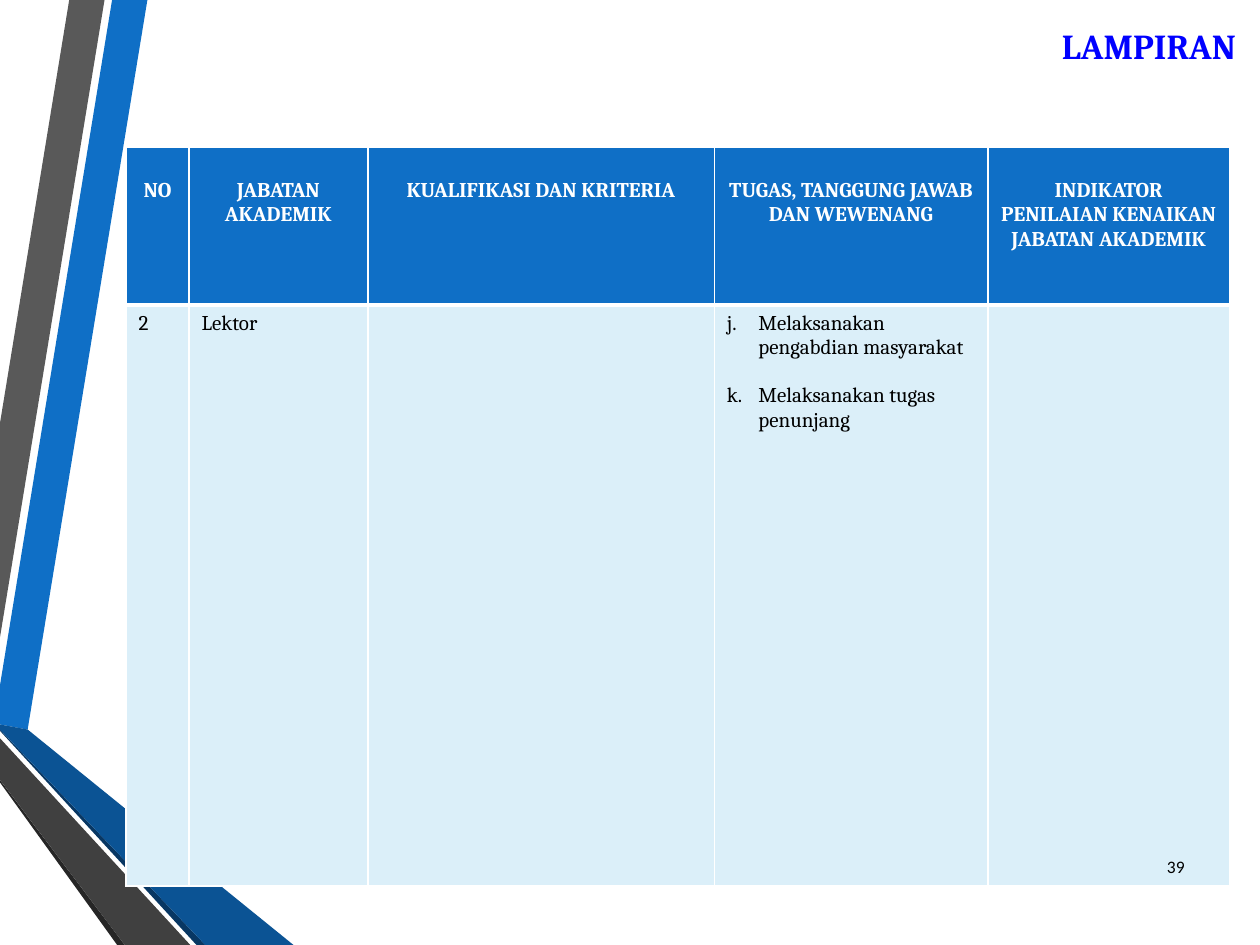
from lxml.etree import SubElement
from pptx import Presentation
from pptx.dml.color import RGBColor
from pptx.enum.text import MSO_ANCHOR, PP_ALIGN
from pptx.oxml import parse_xml
from pptx.oxml.ns import nsdecls, qn
from pptx.util import Inches, Pt

BLUE = RGBColor(0x0F, 0x6F, 0xC6)
MID_BLUE = RGBColor(0x0B, 0x53, 0x94)
DARK_BLUE = RGBColor(0x08, 0x37, 0x63)
GREY = RGBColor(0x59, 0x59, 0x59)
DARK_GREY = RGBColor(0x40, 0x40, 0x40)
CHARCOAL = RGBColor(0x26, 0x26, 0x26)
PALE_BLUE = RGBColor(0xDB, 0xEF, 0xF9)
TITLE_BLUE = RGBColor(0x00, 0x00, 0xFF)
WHITE = RGBColor(0xFF, 0xFF, 0xFF)
BLACK = RGBColor(0x00, 0x00, 0x00)

RIBBONS = [
    (BLUE, [(0, 5.44), (0, 5.75), (0.22, 5.79), (1.17, 0), (0.89, 0)]),
    (GREY, [(0.83, 0), (0.55, 0), (0, 3.36), (0, 5.06)]),
    (CHARCOAL, [(0, 6.19), (0, 6.21), (0.93, 7.5), (0.99, 7.5)]),
    (DARK_BLUE, [(0, 5.79), (0, 5.8), (1.56, 7.5), (1.63, 7.5)]),
    (MID_BLUE, [(0, 5.79), (1.63, 7.5), (2.33, 7.5), (0.22, 5.79), (0, 5.75)]),
    (DARK_GREY, [(0, 6.19), (0.99, 7.5), (1.51, 7.5), (0, 5.86)]),
]
COLUMNS = [
    ("NO", 0.5, ["2"]),
    ("JABATAN AKADEMIK", 1.42, ["Lektor"]),
    ("KUALIFIKASI DAN KRITERIA", 2.75, []),
    ("TUGAS, TANGGUNG JAWAB DAN WEWENANG", 2.17,
     ["Melaksanakan pengabdian masyarakat", "Melaksanakan tugas penunjang"]),
    ("INDIKATOR PENILAIAN KENAIKAN JABATAN AKADEMIK", 1.92, []),
]
ROW_HEIGHTS = (1.25, 4.61)
FIRST_LETTER = 10


def write(paragraph, text, size=12, font="Cambria", color=BLACK, bold=False,
          align=PP_ALIGN.LEFT):
    """Put formatted text into a paragraph."""
    paragraph.alignment = align
    run = paragraph.add_run()
    run.text = text
    run.font.size = Pt(size)
    run.font.name = font
    run.font.bold = bold
    run.font.color.rgb = color


def letter(paragraph, start):
    """Number a paragraph with lower-case letters and a hanging indent."""
    properties = paragraph._p.get_or_add_pPr()
    properties.set("marL", str(Inches(0.25)))
    properties.set("indent", str(Inches(-0.25)))
    SubElement(properties, qn("a:buAutoNum"), type="alphaLcPeriod", startAt=str(start))


def style_cell(cell, fill, bottom=1):
    """Fill a cell and give it white borders."""
    cell.fill.solid()
    cell.fill.fore_color.rgb = fill
    widths = {"lnL": 1, "lnR": 1, "lnT": 1, "lnB": bottom}
    for position, (side, width) in enumerate(widths.items()):
        border = parse_xml(
            f'<a:{side} {nsdecls("a")} w="{Pt(width)}"><a:solidFill>'
            f'<a:srgbClr val="{WHITE}"/></a:solidFill></a:{side}>')
        cell._tc.get_or_add_tcPr().insert(position, border)


def add_ribbons(slide, left, top):
    """Draw the folded ribbons from the given corner."""
    for color, points in RIBBONS:
        corners = [(Inches(left + x), Inches(top + y)) for x, y in points]
        builder = slide.shapes.build_freeform(*corners[0])
        builder.add_line_segments(corners[1:], close=True)
        ribbon = builder.convert_to_shape()
        ribbon.shadow.inherit = False
        ribbon.fill.solid()
        ribbon.fill.fore_color.rgb = color
        ribbon.line.fill.background()


def add_title(slide, left, top, width, height):
    """Place the slide title in its box."""
    title = slide.shapes.title
    title.left, title.top = Inches(left), Inches(top)
    title.width, title.height = Inches(width), Inches(height)
    write(title.text_frame.paragraphs[0], "LAMPIRAN", size=20, color=TITLE_BLUE,
          bold=True, align=PP_ALIGN.RIGHT)


def add_positions_table(slide, left, top, width, height):
    """Build the table of academic positions."""
    table = slide.shapes.add_table(
        len(ROW_HEIGHTS), len(COLUMNS), Inches(left), Inches(top),
        Inches(width), Inches(height)).table
    for row, row_height in zip(table.rows, ROW_HEIGHTS):
        row.height = Inches(row_height)
    for index, (heading, column_width, entries) in enumerate(COLUMNS):
        table.columns[index].width = Inches(column_width)
        header, body = table.cell(0, index), table.cell(1, index)
        style_cell(header, BLUE, bottom=3)
        style_cell(body, PALE_BLUE)
        header.margin_top = Inches(0.25)
        write(header.text_frame.paragraphs[0], heading, color=WHITE, bold=True,
              align=PP_ALIGN.CENTER)
        for number, entry in enumerate(entries):
            frame = body.text_frame
            paragraph = frame.add_paragraph() if number else frame.paragraphs[0]
            write(paragraph, entry)
            if number:
                paragraph.space_before = Pt(14)
            if len(entries) > 1:
                letter(paragraph, FIRST_LETTER)


def add_page_number(slide, left, top, width, height):
    """Write the page number in its box."""
    frame = slide.shapes.add_textbox(
        Inches(left), Inches(top), Inches(width), Inches(height)).text_frame
    frame.word_wrap = True
    frame.vertical_anchor = MSO_ANCHOR.MIDDLE
    write(frame.paragraphs[0], "39", size=10, font="Calibri", align=PP_ALIGN.RIGHT)


def main():
    """Build and save the slide."""
    deck = Presentation()
    deck.slide_width, deck.slide_height = Inches(10), Inches(7.5)
    slide = deck.slides.add_slide(deck.slide_layouts[5])
    add_ribbons(slide, 0, 0)
    add_positions_table(slide, 1, 1.17, 8.76, sum(ROW_HEIGHTS))
    add_page_number(slide, 9.03, 6.68, 0.47, 0.4)
    add_title(slide, 2.58, 0.14, 7.33, 0.44)
    deck.save("out.pptx")


if __name__ == "__main__":
    main()
